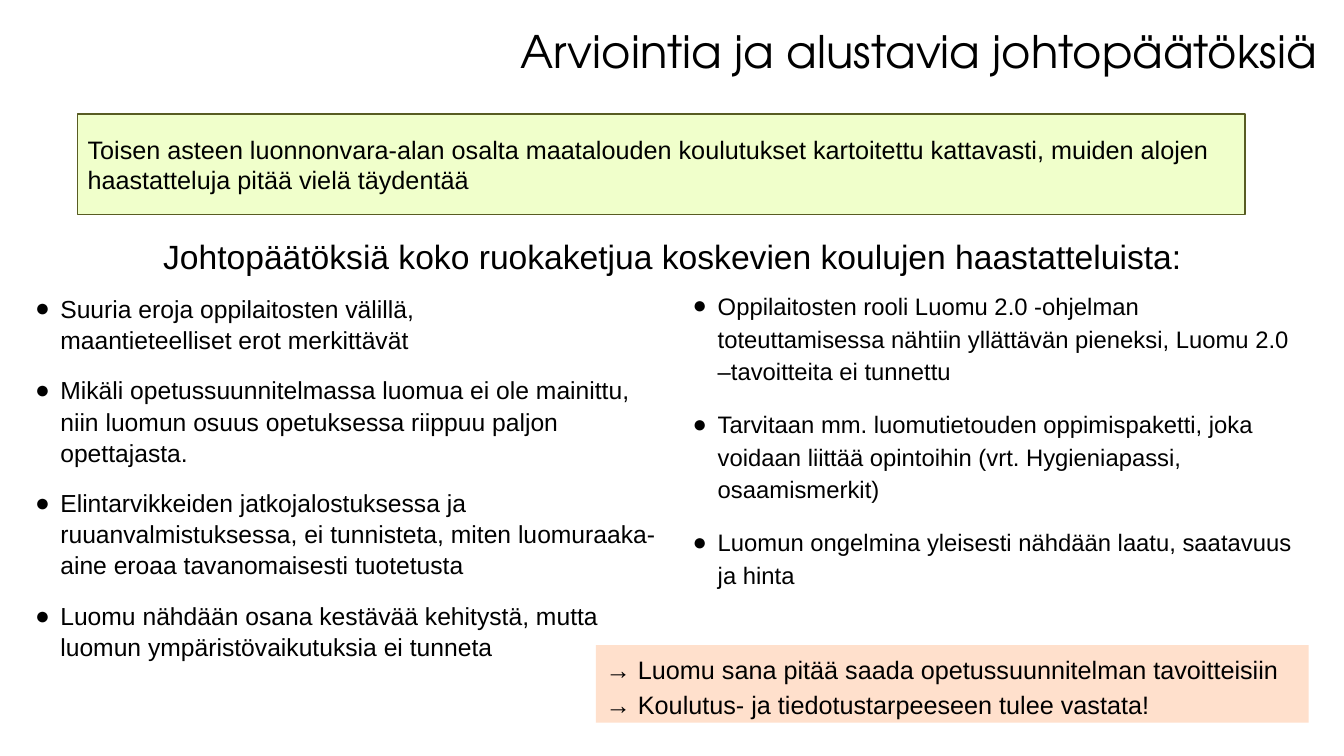
"""Build the slide of assessments and preliminary conclusions."""
from dataclasses import dataclass
from typing import Optional

from lxml import etree
from pptx import Presentation
from pptx.dml.color import RGBColor
from pptx.enum.shapes import MSO_SHAPE
from pptx.enum.text import MSO_ANCHOR, PP_ALIGN
from pptx.oxml.ns import qn
from pptx.util import Inches, Pt

COLORS = {
    "text": "000000",
    "scope_fill": "F0FFCB",
    "scope_line": "585C23",
    "action_fill": "FFE0CC",
}


@dataclass(frozen=True)
class TextBlock:
    left: float
    top: float
    width: float
    height: float
    paragraphs: tuple[str, ...]
    size: float
    font: str = "Arial"
    line_spacing: float = 1.0
    space_before: float = 0
    space_after: float = 0
    anchor: MSO_ANCHOR = MSO_ANCHOR.TOP
    bullet: Optional[str] = None
    fill: Optional[str] = None
    line: Optional[str] = None


BLOCKS = (
    TextBlock(5.06, -0.5, 8.24, 1.33, ("Arviointia ja alustavia johtopäätöksiä",), 32,
              font="TeX Gyre Adventor", line_spacing=0.9, anchor=MSO_ANCHOR.BOTTOM),
    TextBlock(0.25, 2.85, 6.42, 4.07, (
        "Suuria eroja oppilaitosten välillä, \nmaantieteelliset erot merkittävät",
        "Mikäli opetussuunnitelmassa luomua ei ole mainittu, niin luomun osuus "
        "opetuksessa riippuu paljon opettajasta.",
        "Elintarvikkeiden jatkojalostuksessa ja ruuanvalmistuksessa, ei tunnisteta, "
        "miten luomuraaka-aine eroaa tavanomaisesti tuotetusta",
        "Luomu nähdään osana kestävää kehitystä, mutta luomun ympäristövaikutuksia "
        "ei tunneta",
    ), 17.6, line_spacing=1.05, space_before=10, space_after=4, bullet="●"),
    TextBlock(6.77, 2.8, 6.21, 3.1, (
        "Oppilaitosten rooli Luomu 2.0 -ohjelman toteuttamisessa nähtiin yllättävän "
        "pieneksi, Luomu 2.0 –tavoitteita ei tunnettu",
        "Tarvitaan mm. luomutietouden oppimispaketti, joka voidaan liittää opintoihin "
        "(vrt. Hygieniapassi, osaamismerkit)",
        "Luomun ongelmina yleisesti nähdään laatu, saatavuus ja hinta",
    ), 17, line_spacing=1.15, space_before=10, space_after=4, bullet="●"),
    TextBlock(0.77, 1.13, 11.58, 1, (
        "Toisen asteen luonnonvara-alan osalta maatalouden koulutukset kartoitettu "
        "kattavasti, muiden alojen haastatteluja pitää vielä täydentää",
    ), 18, anchor=MSO_ANCHOR.MIDDLE, fill="scope_fill", line="scope_line"),
    TextBlock(1.52, 2.29, 10.5, 0.5, (
        "Johtopäätöksiä koko ruokaketjua koskevien koulujen haastatteluista:",
    ), 24),
    TextBlock(5.91, 6.4, 7.07, 0.77, (
        "→ Luomu sana pitää saada opetussuunnitelman tavoitteisiin\n"
        "→ Koulutus- ja tiedotustarpeeseen tulee vastata!",
    ), 18, line_spacing=1.15, fill="action_fill"),
)


def color(name: str) -> RGBColor:
    return RGBColor.from_string(COLORS[name])


def add_bullet(paragraph, character: str) -> None:
    properties = paragraph._p.get_or_add_pPr()
    properties.set("marL", str(Inches(0.25)))
    properties.set("indent", str(Inches(-0.25)))
    etree.SubElement(properties, qn("a:buFont")).set("typeface", "Arial")
    etree.SubElement(properties, qn("a:buChar")).set("char", character)


def add_panel(slide, block: TextBlock, bounds: tuple):
    shape = slide.shapes.add_shape(MSO_SHAPE.RECTANGLE, *bounds)
    shape.shadow.inherit = False
    shape.fill.solid()
    shape.fill.fore_color.rgb = color(block.fill)
    if block.line:
        shape.line.color.rgb = color(block.line)
        shape.line.width = Pt(1)
    else:
        shape.line.fill.background()
    return shape


def add_block(slide, block: TextBlock) -> None:
    bounds = tuple(map(Inches, (block.left, block.top, block.width, block.height)))
    if block.fill:
        shape = add_panel(slide, block, bounds)
    else:
        shape = slide.shapes.add_textbox(*bounds)
    text_frame = shape.text_frame
    text_frame.word_wrap = True
    text_frame.vertical_anchor = block.anchor
    for index, text in enumerate(block.paragraphs):
        paragraph = text_frame.add_paragraph() if index else text_frame.paragraphs[0]
        paragraph.text = text
        if block.bullet:
            add_bullet(paragraph, block.bullet)
        paragraph.alignment = PP_ALIGN.LEFT
        paragraph.line_spacing = block.line_spacing
        paragraph.space_before = Pt(block.space_before if index else 0)
        paragraph.space_after = Pt(block.space_after)
        for run in paragraph.runs:
            run.font.name = block.font
            run.font.size = Pt(block.size)
            run.font.color.rgb = color("text")


def main() -> None:
    presentation = Presentation()
    presentation.slide_width = Inches(13.33)
    presentation.slide_height = Inches(7.5)
    slide = presentation.slides.add_slide(presentation.slide_layouts[6])
    for block in BLOCKS:
        add_block(slide, block)
    presentation.save("out.pptx")


if __name__ == "__main__":
    main()
